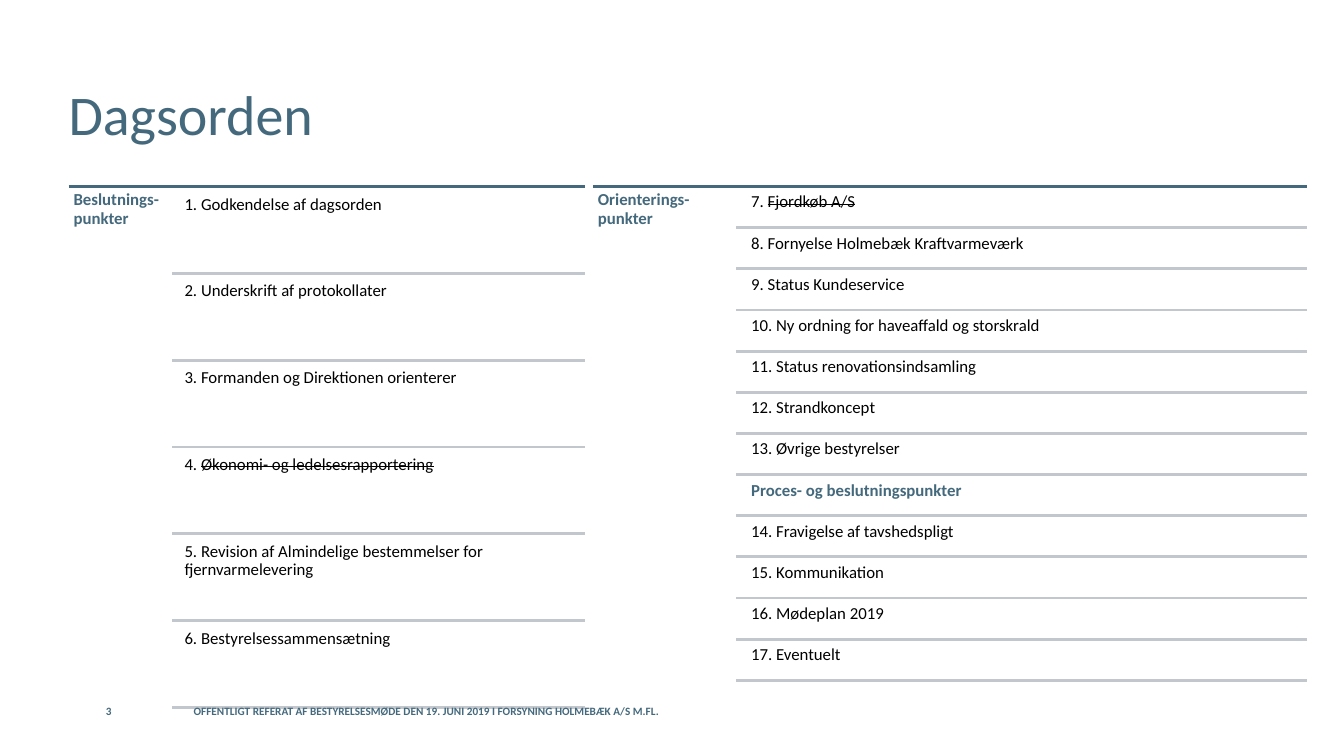
from dataclasses import dataclass

from lxml.etree import SubElement
from pptx import Presentation
from pptx.dml.color import RGBColor
from pptx.enum.shapes import MSO_CONNECTOR
from pptx.enum.text import MSO_ANCHOR, PP_ALIGN
from pptx.oxml.ns import qn
from pptx.util import Inches, Pt


@dataclass(frozen=True)
class Theme:
    font: str = "Calibri"
    accent: RGBColor = RGBColor(0x44, 0x69, 0x7D)
    divider: RGBColor = RGBColor(0xC1, 0xC7, 0xCC)
    ink: RGBColor = RGBColor(0, 0, 0)
    title_size: int = 40
    item_size: int = 12
    footer_size: int = 8
    rule_width: int = 2


theme = Theme()


def write(shape, runs, size, color, bold=False, inset=0.0, anchor=MSO_ANCHOR.TOP, spacing=1.0):
    """Fill a shape with one paragraph; runs are (words, struck) pairs."""
    frame = shape.text_frame
    frame.word_wrap = True
    frame.vertical_anchor = anchor
    frame.margin_left = frame.margin_right = Inches(inset)
    frame.margin_top = frame.margin_bottom = Inches(inset)
    paragraph = frame.paragraphs[0]
    paragraph.alignment = PP_ALIGN.LEFT
    paragraph.line_spacing = spacing
    for words, struck in runs:
        run = paragraph.add_run()
        run.text = words
        run.font.name = theme.font
        run.font.size = Pt(size)
        run.font.bold = bold
        run.font.color.rgb = color
        if struck:
            run.font._element.set("strike", "sngStrike")


def add_rule(left, right, y, color):
    rule = slide.shapes.add_connector(
        MSO_CONNECTOR.STRAIGHT, Inches(left), Inches(y), Inches(right), Inches(y))
    rule.line.color.rgb = color
    rule.line.width = Pt(theme.rule_width)
    SubElement(rule._element.spPr, qn("a:effectLst"))


presentation = Presentation()
presentation.slide_width = Inches(13.33)
presentation.slide_height = Inches(7.5)
slide = presentation.slides.add_slide(presentation.slide_layouts[5])

heading = slide.shapes.title
heading.left, heading.top = Inches(0.68), Inches(0.4)
heading.width, heading.height = Inches(11.5), Inches(1.45)
write(heading, [("Dagsorden", False)], theme.title_size, theme.accent, anchor=MSO_ANCHOR.MIDDLE)

decisions = [
    [("1. Godkendelse af dagsorden", False)],
    [("2. Underskrift af protokollater", False)],
    [("3. Formanden og Direktionen orienterer", False)],
    [("4. ", False), ("Økonomi- og ledelsesrapportering", True)],
    [("5. Revision af Almindelige bestemmelser for fjernvarmelevering", False)],
    [("6. Bestyrelsessammensætning", False)],
]
subheading = [("Proces- og beslutningspunkter", False)]
briefings = [
    [("7. ", False), ("Fjordkøb A/S", True)],
    [("8. Fornyelse Holmebæk Kraftvarmeværk", False)],
    [("9. Status Kundeservice", False)],
    [("10. Ny ordning for haveaffald og storskrald", False)],
    [("11. Status renovationsindsamling", False)],
    [("12. Strandkoncept", False)],
    [("13. Øvrige bestyrelser", False)],
    subheading,
    [("14. Fravigelse af tavshedspligt", False)],
    [("15. Kommunikation", False)],
    [("16. Mødeplan 2019", False)],
    [("17. Eventuelt", False)],
]

# label, items, left edge, divider start, item start, right edge, bottom, gap above an item
agenda = [
    ("Beslutnings-punkter", decisions, 0.68, 1.71, 1.78, 5.8, 7.02, 0.04),
    ("Orienterings-punkter", briefings, 5.88, 7.3, 7.4, 12.96, 6.75, 0.02),
]
agenda_top = 1.85
for label, items, left, divider_left, item_left, right, bottom, gap in agenda:
    add_rule(left, right, agenda_top, theme.accent)
    section = slide.shapes.add_textbox(
        Inches(left), Inches(agenda_top), Inches(divider_left - left), Inches(bottom - agenda_top))
    write(section, [(label, False)], theme.item_size, theme.accent, True, 0.05, spacing=0.9)

    row = (bottom - agenda_top) / len(items)
    for index, item in enumerate(items):
        row_top = agenda_top + index * row
        entry = slide.shapes.add_textbox(
            Inches(item_left), Inches(row_top + gap), Inches(right - item_left), Inches(row - gap))
        is_subheading = item is subheading
        write(entry, item, theme.item_size, theme.accent if is_subheading else theme.ink,
              is_subheading, 0.05, spacing=0.9)
        add_rule(divider_left, right, row_top + row, theme.divider)

footer = [
    ("3", 1.05, 0.68),
    ("OFFENTLIGT REFERAT AF BESTYRELSESMØDE DEN 19. JUNI 2019 I FORSYNING HOLMEBÆK A/S M.FL.", 1.92, 5.67),
]
for words, left, width in footer:
    note = slide.shapes.add_textbox(Inches(left), Inches(6.93), Inches(width), Inches(0.19))
    write(note, [(words, False)], theme.footer_size, theme.accent, True, anchor=MSO_ANCHOR.BOTTOM)

presentation.save("out.pptx")
